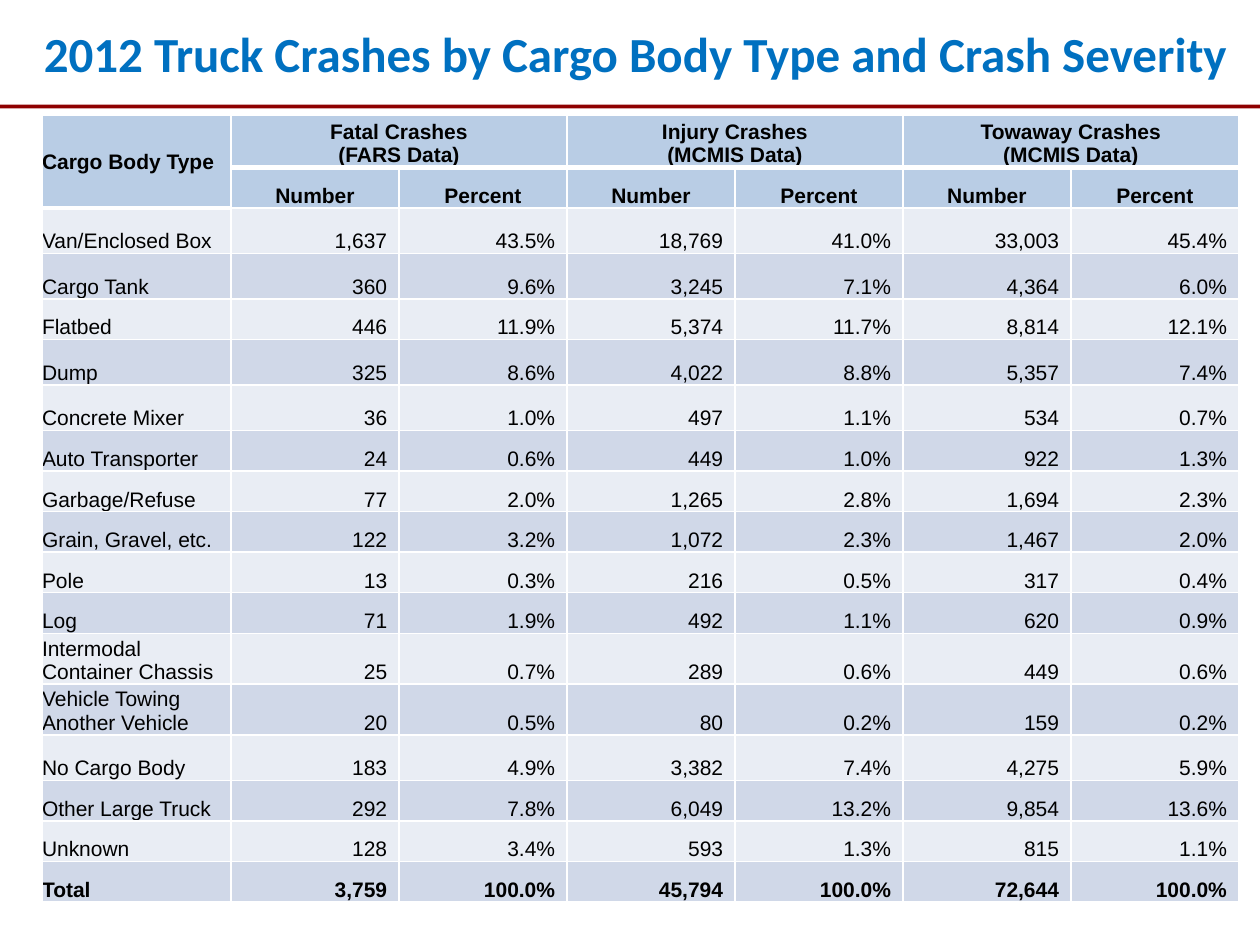
from lxml import etree
from pptx import Presentation
from pptx import util as u
from pptx.dml.color import RGBColor
from pptx.enum import shapes, text
from pptx.oxml.ns import qn

WHITE = RGBColor(0xFF, 0xFF, 0xFF)
BLACK = RGBColor(0x00, 0x00, 0x00)
TITLE_BLUE = RGBColor(0x00, 0x70, 0xC0)
RULE_RED = RGBColor(0x8E, 0x00, 0x00)
HEADER_BLUE = RGBColor(0xB9, 0xCD, 0xE5)
LIGHT_BAND = RGBColor(0xE9, 0xED, 0xF4)
DARK_BAND = RGBColor(0xD0, 0xD8, 0xE8)

LEFT, CENTER, RIGHT = text.PP_ALIGN.LEFT, text.PP_ALIGN.CENTER, text.PP_ALIGN.RIGHT
SHORT, MEDIUM, TALL = 23.2, 26, 29

GROUPS = ["Fatal Crashes\n(FARS Data)", "Injury Crashes\n(MCMIS Data)",
          "Towaway Crashes\n(MCMIS Data)"]
CRASHES = [
    (MEDIUM, "Van/Enclosed Box", "1,637", "43.5%", "18,769", "41.0%", "33,003", "45.4%"),
    (MEDIUM, "Cargo Tank", "360", "9.6%", "3,245", "7.1%", "4,364", "6.0%"),
    (SHORT, "Flatbed", "446", "11.9%", "5,374", "11.7%", "8,814", "12.1%"),
    (MEDIUM, "Dump", "325", "8.6%", "4,022", "8.8%", "5,357", "7.4%"),
    (MEDIUM, "Concrete Mixer", "36", "1.0%", "497", "1.1%", "534", "0.7%"),
    (SHORT, "Auto Transporter", "24", "0.6%", "449", "1.0%", "922", "1.3%"),
    (SHORT, "Garbage/Refuse", "77", "2.0%", "1,265", "2.8%", "1,694", "2.3%"),
    (SHORT, "Grain, Gravel, etc.", "122", "3.2%", "1,072", "2.3%", "1,467", "2.0%"),
    (SHORT, "Pole", "13", "0.3%", "216", "0.5%", "317", "0.4%"),
    (SHORT, "Log", "71", "1.9%", "492", "1.1%", "620", "0.9%"),
    (TALL, "Intermodal Container Chassis", "25", "0.7%", "289", "0.6%", "449", "0.6%"),
    (TALL, "Vehicle Towing Another Vehicle", "20", "0.5%", "80", "0.2%", "159", "0.2%"),
    (MEDIUM, "No Cargo Body", "183", "4.9%", "3,382", "7.4%", "4,275", "5.9%"),
    (SHORT, "Other Large Truck", "292", "7.8%", "6,049", "13.2%", "9,854", "13.6%"),
    (SHORT, "Unknown", "128", "3.4%", "593", "1.3%", "815", "1.1%"),
    (SHORT, "Total", "3,759", "100.0%", "45,794", "100.0%", "72,644", "100.0%"),
]


def add_run(paragraph, wording, font, size, color, bold):
    """Append one formatted run to a paragraph."""
    run = paragraph.add_run()
    run.text = wording
    run.font.name = font
    run.font.size = u.Pt(size)
    run.font.bold = bold
    run.font.color.rgb = color


def fill_title(slide, wording):
    """Place and format the title placeholder."""
    title = slide.shapes.title
    title.left, title.top = u.Pt(0), u.Pt(0)
    title.width, title.height = u.Pt(720), u.Pt(60)
    frame = title.text_frame
    frame.auto_size = text.MSO_AUTO_SIZE.NONE
    frame.vertical_anchor = text.MSO_ANCHOR.MIDDLE
    paragraph = frame.paragraphs[0]
    paragraph.alignment = CENTER
    add_run(paragraph, " ", "Calibri", 26, TITLE_BLUE, True)
    add_run(paragraph, wording, "Calibri", 28, TITLE_BLUE, True)


def add_rule(slide):
    """Draw the red band under the title."""
    rule = slide.shapes.add_shape(shapes.MSO_SHAPE.RECTANGLE,
                                  u.Pt(0), u.Pt(59.8), u.Pt(720), u.Pt(2.2))
    rule.shadow.inherit = False
    rule.fill.solid()
    rule.fill.fore_color.rgb = RULE_RED
    rule.line.fill.background()


def set_borders(cell, top=1, bottom=1):
    """Give a cell white borders on its four sides."""
    properties = cell._tc.get_or_add_tcPr()
    for side, width in (("L", 1), ("R", 1), ("T", top), ("B", bottom)):
        line = etree.SubElement(properties, qn(f"a:ln{side}"), w=str(u.Pt(width)))
        solid = etree.SubElement(line, qn("a:solidFill"))
        etree.SubElement(solid, qn("a:srgbClr"), val=str(WHITE))


def style_cell(cell, fill, top=1, bottom=1):
    """Set the borders, fill and anchoring of a cell."""
    set_borders(cell, top, bottom)
    cell.fill.solid()
    cell.fill.fore_color.rgb = fill
    cell.vertical_anchor = text.MSO_ANCHOR.BOTTOM
    cell.margin_left = cell.margin_right = cell.margin_top = cell.margin_bottom = 0


def write_cell(cell, wording, alignment, bold):
    """Write one paragraph per line of wording into a cell."""
    frame = cell.text_frame
    for index, line in enumerate(wording.split("\n")):
        paragraph = frame.add_paragraph() if index else frame.paragraphs[0]
        paragraph.alignment = alignment
        add_run(paragraph, line, "Arial", 12, BLACK, bold)


def fill_header(table):
    """Fill the two header rows and merge their spanning cells."""
    for column in range(7):
        style_cell(table.cell(0, column), HEADER_BLUE, bottom=3)
        style_cell(table.cell(1, column), HEADER_BLUE,
                   top=3 if column else 1, bottom=1 if column else 3)
    corner = table.cell(0, 0)
    corner.merge(table.cell(1, 0))
    corner.vertical_anchor = text.MSO_ANCHOR.MIDDLE
    write_cell(corner, "Cargo Body Type", LEFT, True)
    for index, group in enumerate(GROUPS):
        column = 1 + 2 * index
        table.cell(0, column).merge(table.cell(0, column + 1))
        write_cell(table.cell(0, column), group, CENTER, True)
        write_cell(table.cell(1, column), "Number", CENTER, True)
        write_cell(table.cell(1, column + 1), "Percent", CENTER, True)


def fill_body(table):
    """Fill the banded data rows, with the total in bold."""
    for index, (_, *values) in enumerate(CRASHES):
        band = DARK_BAND if index % 2 else LIGHT_BAND
        for column, value in enumerate(values):
            cell = table.cell(index + 2, column)
            style_cell(cell, band, top=3 if index == column == 0 else 1)
            if column:
                cell.margin_right = u.Pt(6.75)
            write_cell(cell, value, RIGHT if column else LEFT, values[0] == "Total")


def add_crash_table(slide):
    """Add the table of crashes by cargo body type."""
    heights = [29.6, SHORT] + [crash[0] for crash in CRASHES]
    widths = [108] + [96] * 6
    table = slide.shapes.add_table(len(heights), len(widths), u.Pt(24), u.Pt(66),
                                   u.Pt(sum(widths)), u.Pt(sum(heights))).table
    table.first_row = table.horz_banding = False
    for row, height in zip(table.rows, heights):
        row.height = u.Pt(height)
    for column, width in zip(table.columns, widths):
        column.width = u.Pt(width)
    fill_header(table)
    fill_body(table)


def main():
    """Build the slide and save it."""
    presentation = Presentation()
    presentation.slide_width, presentation.slide_height = u.Pt(720), u.Pt(540)
    slide = presentation.slides.add_slide(presentation.slide_layouts[5])
    add_rule(slide)
    fill_title(slide, "2012 Truck Crashes by Cargo Body Type and Crash Severity")
    add_crash_table(slide)
    presentation.save("out.pptx")


if __name__ == "__main__":
    main()
